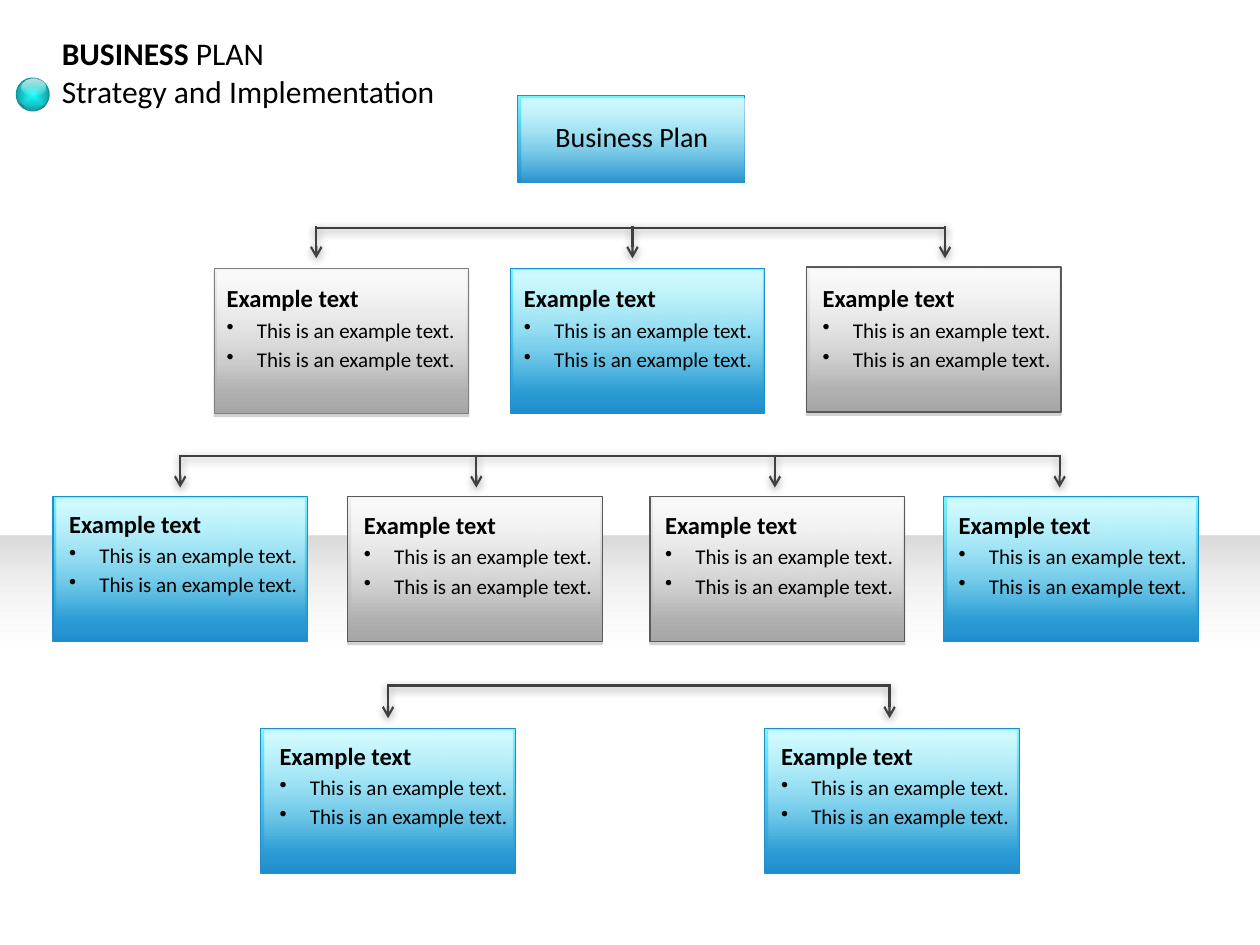
from dataclasses import dataclass
from typing import Any

from lxml.etree import SubElement
from pptx import Presentation
from pptx.dml.color import RGBColor
from pptx.enum.shapes import MSO_CONNECTOR, MSO_SHAPE as SHAPE
from pptx.enum.text import MSO_ANCHOR, MSO_AUTO_SIZE, PP_ALIGN
from pptx.oxml import parse_xml
from pptx.oxml.ns import nsdecls, qn
from pptx.util import Inches, Pt

BLUE = ([(0, "74F4FF", 100), (100, "208ECD", 100)], "208ECD", False)
GRAY = ([(0, "F2F2F2", 100), (100, "A6A6A6", 100)], "595959", True)
LIGHT_GRAY = (GRAY[0], "7F7F7F", True)
GLOSS = [(0, "FFFFFF", 61), (10, "FFFFFF", 55), (100, "FFFFFF", 0)]
BOX_SHADOW = ("808080", 35, 0, 1.8)
LINE_SHADOW = ("000000", 38, 5, 1.6)

BRANCHES = [
    (1.81, 1.79, [2.51, 5.02, 7.5]),
    (3.62, 3.61, [1.43, 3.78, 6.15, 8.41]),
    (5.44, 5.44, [3.08, 7.06]),
]
CARDS = [
    (1.7, 2.13, 1.7, 2.2, LIGHT_GRAY),
    (4.05, 2.13, 4.06, 2.2, BLUE),
    (6.4, 2.12, 6.43, 2.2, GRAY),
    (0.42, 3.94, 0.45, 3.99, BLUE),
    (2.76, 3.94, 2.79, 4, GRAY),
    (5.16, 3.94, 5.18, 4, GRAY),
    (7.49, 3.94, 7.51, 4, BLUE),
    (2.07, 5.78, 2.12, 5.83, BLUE),
    (6.07, 5.78, 6.1, 5.83, BLUE),
]


def color(hex_string):
    return RGBColor.from_string(hex_string)


def color_xml(hex_string, opacity):
    return (f'<a:srgbClr val="{hex_string}">'
            f'<a:alpha val="{opacity * 1000}"/></a:srgbClr>')


@dataclass
class SlideBuilder:
    """Draws styled diagram elements on the current slide."""
    slide: Any
    font: str = "Calibri"
    ink: str = "000000"
    wire: str = "404040"

    def style(self, paragraph, size, bold=None):
        font = paragraph.font
        font.name, font.size, font.bold = self.font, Pt(size), bold
        font.color.rgb = color(self.ink)

    def shadow(self, properties, shade, opacity, blur, distance):
        effects = properties.find(qn("a:effectLst"))
        if effects is None:
            effects = SubElement(properties, qn("a:effectLst"))
        effects.append(parse_xml(
            f'<a:outerShdw {nsdecls("a")} blurRad="{Pt(blur)}" '
            f'dist="{Pt(distance)}" dir="5400000" algn="t" rotWithShape="0">'
            f'{color_xml(shade, opacity)}</a:outerShdw>'))

    def panel(self, kind, left, top, width, height, stops, outline=None,
              shadow=None, angle=90, radial=False, rotation=0):
        panel = self.slide.shapes.add_shape(
            kind, Inches(left), Inches(top), Inches(width), Inches(height))
        panel.rotation = rotation
        panel.fill.background()
        direction = (
            '<a:path path="shape"><a:fillToRect l="50000" t="50000" '
            'r="50000" b="50000"/></a:path>' if radial
            else f'<a:lin ang="{angle * 60000}" scaled="0"/>')
        stop_xml = "".join(
            f'<a:gs pos="{position * 1000}">{color_xml(shade, opacity)}</a:gs>'
            for position, shade, opacity in stops)
        properties = panel._element.spPr
        properties.replace(properties.find(qn("a:noFill")), parse_xml(
            f'<a:gradFill {nsdecls("a")} rotWithShape="1">'
            f'<a:gsLst>{stop_xml}</a:gsLst>{direction}</a:gradFill>'))
        if outline:
            panel.line.color.rgb = color(outline)
            panel.line.width = Pt(0.75)
        else:
            panel.line.fill.background()
        panel.shadow.inherit = False
        if shadow:
            self.shadow(properties, *shadow)
        return panel

    def glossy_box(self, left, top, width, height, gloss_size, look):
        stops, outline, shaded = look
        self.panel(SHAPE.RECTANGLE, left, top, width, height, stops, outline,
                   BOX_SHADOW if shaded else None)
        self.panel(SHAPE.RECTANGLE, left + 0.03, top + 0.02, *gloss_size,
                   GLOSS, shadow=BOX_SHADOW)

    def line(self, x1, y1, x2, y2, width, arrow=False):
        line = self.slide.shapes.add_connector(
            MSO_CONNECTOR.STRAIGHT,
            Inches(x1), Inches(y1), Inches(x2), Inches(y2))
        line.line.color.rgb = color(self.wire)
        line.line.width = Pt(width)
        properties = line._element.spPr
        if arrow:
            SubElement(properties.find(qn("a:ln")), qn("a:tailEnd"), type="arrow")
        self.shadow(properties, *LINE_SHADOW)

    def branch(self, bar_y, drop_y, drops):
        self.line(drops[0] - 0.01, bar_y, drops[-1] + 0.01, bar_y, 1.5)
        for x in drops:
            self.line(x, drop_y, x, drop_y + 0.26, 1.25, arrow=True)

    def text(self, left, top, width, height):
        box = self.slide.shapes.add_textbox(
            Inches(left), Inches(top), Inches(width), Inches(height))
        frame = box.text_frame
        frame.word_wrap = True
        frame.auto_size = MSO_AUTO_SIZE.SHAPE_TO_FIT_TEXT
        return frame

    def card_text(self, left, top, heading, points):
        frame = self.text(left, top, 2.08, 0.82)
        frame.text = "\n".join([heading, *points])
        title, *bullets = frame.paragraphs
        self.style(title, 14, True)
        title.space_before = Pt(2.8)
        for bullet in bullets:
            self.style(bullet, 12)
            bullet.space_before = Pt(2.4)
            properties = bullet._p.get_or_add_pPr()
            properties.set("marL", str(Inches(0.24)))
            properties.set("indent", str(Inches(-0.24)))
            marker = parse_xml(f'<a:buChar {nsdecls("a")} char="•"/>')
            properties.insert_element_before(marker, "a:defRPr")

    def title(self, bold_start, rest, subtitle):
        title = self.slide.shapes.title
        title.left, title.top = Inches(0.39), Inches(0.22)
        title.width, title.height = Inches(3.19), Inches(0.71)
        frame = title.text_frame
        frame.vertical_anchor = MSO_ANCHOR.TOP
        heading = frame.paragraphs[0]
        start = heading.add_run()
        start.text, start.font.bold = bold_start, True
        heading.add_run().text = rest
        frame.add_paragraph().text = subtitle
        for paragraph in frame.paragraphs:
            self.style(paragraph, 18)
            paragraph.alignment = PP_ALIGN.LEFT

    def orb(self):
        self.panel(SHAPE.OVAL, 0.13, 0.62, 0.26, 0.26,
                   [(0, "1DFDFF", 100), (100, "0C9799", 100)], "0C9799",
                   radial=True, rotation=350.9)
        self.panel(SHAPE.OVAL, 0.17, 0.62, 0.19, 0.14,
                   [(0, "FFFFFF", 0), (100, "FFFCF9", 77)], angle=270)
        crescent = self.panel(SHAPE.MOON, 0.2, 0.69, 0.12, 0.26,
                              [(24, "000000", 24), (100, "FFFFFF", 0)],
                              radial=True, rotation=275.9)
        crescent.adjustments[0] = 0.19


def main():
    deck = Presentation()
    deck.slide_width, deck.slide_height = Inches(10), Inches(7.5)
    plan = SlideBuilder(deck.slides.add_slide(deck.slide_layouts[5]))
    plan.panel(SHAPE.RECTANGLE, 0, 4.25, 10, 2.6,
               [(0, "D9D9D9", 100), (39, "FFFFFF", 0)])
    plan.title("BUSINESS", " PLAN", "Strategy and Implementation")
    plan.orb()

    plan.glossy_box(4.11, 0.76, 1.8, 0.69, (1.77, 0.69), BLUE)
    root = plan.text(4.2, 0.9, 1.63, 0.37)
    root.text = "Business Plan"
    plan.style(root.paragraphs[0], 16)
    root.paragraphs[0].alignment = PP_ALIGN.CENTER

    for branch in BRANCHES:
        plan.branch(*branch)
    for left, top, text_left, text_top, look in CARDS:
        plan.glossy_box(left, top, 2.02, 1.15, (1.97, 0.94), look)
        plan.card_text(text_left, text_top, "Example text",
                       ["This is an example text."] * 2)
    deck.save("out.pptx")


if __name__ == "__main__":
    main()
